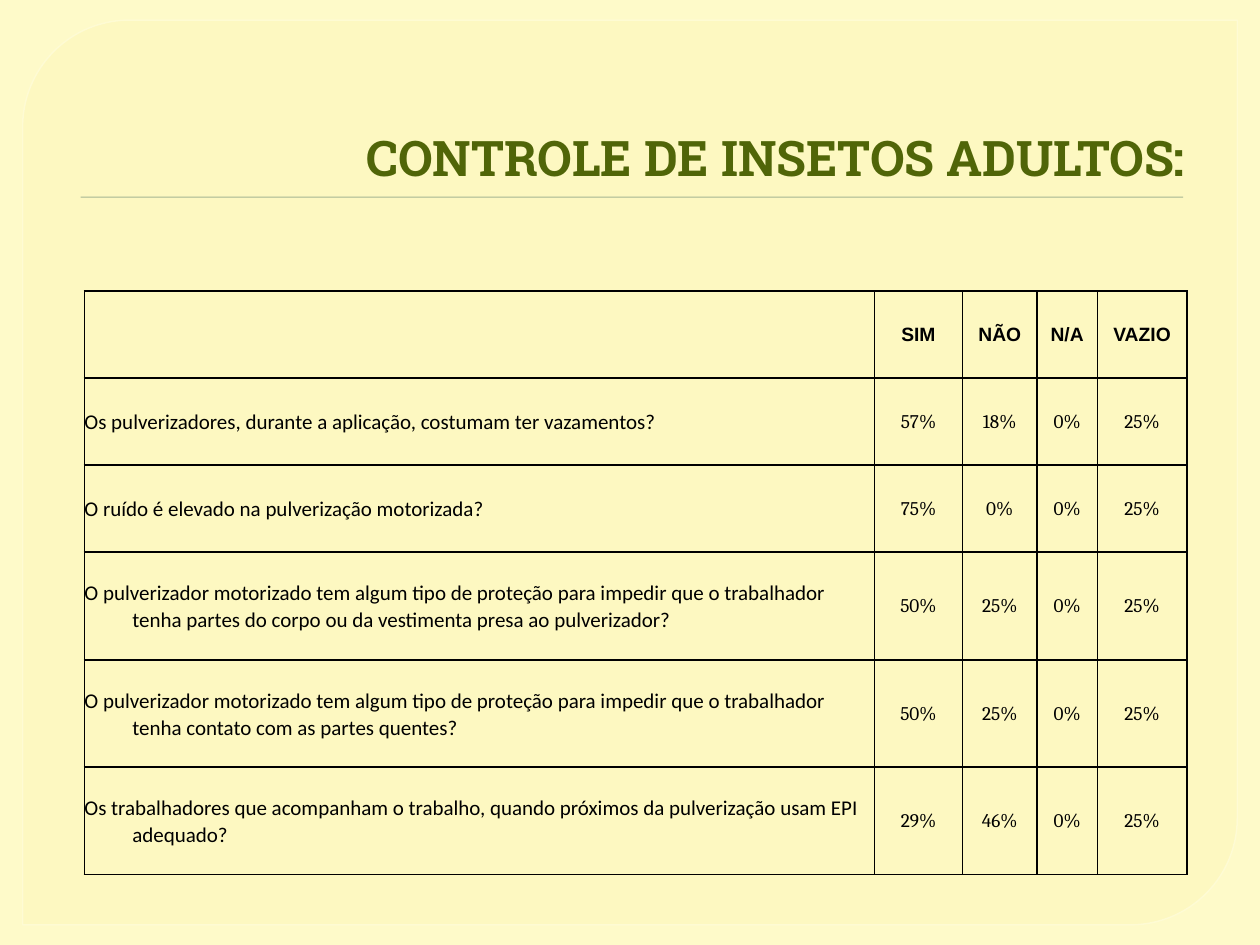
"""Build a slide with a survey table on the control of adult insects."""
from lxml import etree
from pptx import Presentation
from pptx import util as u
from pptx.dml import color
from pptx.enum import shapes, text
from pptx.oxml import ns


def paint(fill, tint):
    fill.solid()
    fill.fore_color.rgb = color.RGBColor.from_string(tint)


def write(frame, words, size, face, bold, tint, align):
    par = frame.paragraphs[0]
    par.alignment = align
    run = par.add_run()
    run.text = words
    look = {"size": u.Pt(size), "name": face, "bold": bold}
    for key, val in look.items():
        setattr(run.font, key, val)
    paint(run.font.fill, tint)
    return par


LEFT, MID, RIGHT = text.PP_ALIGN.LEFT, text.PP_ALIGN.CENTER, text.PP_ALIGN.RIGHT
KIND = shapes.MSO_SHAPE

deck = Presentation()
deck.slide_width, deck.slide_height = u.Inches(10), u.Inches(7.5)
slide = deck.slides.add_slide(deck.slide_layouts[6])
paint(slide.background.fill, "FEFAC9")

parts = [
    (KIND.ROUND_2_DIAG_RECTANGLE, (0.18, 0.16, 9.64, 7.18), "FDF8BE"),
    (KIND.RECTANGLE, (0.64, 1.56, 8.75, 0.01), "A5B592"),
]
drawn = []
for kind, box, tint in parts:
    shape = slide.shapes.add_shape(kind, *map(u.Inches, box))
    shape.shadow.inherit = False
    paint(shape.fill, tint)
    shape.line.fill.background()
    drawn.append(shape)

panel = drawn[0]
panel.adjustments[0], panel.adjustments[1] = 0.118, 0
paint(panel.line.fill, "FFFCD6")
panel.line.width = u.Pt(0.87)
for node, alpha in zip(panel.element.spPr.iter(ns.qn("a:srgbClr")), (65, 88)):
    etree.SubElement(node, ns.qn("a:alpha"), val=str(alpha * 1000))

title = slide.shapes.add_textbox(*map(u.Inches, (0.5, 0.28, 9, 1.25))).text_frame
title.word_wrap = True
title.vertical_anchor = text.MSO_ANCHOR.BOTTOM
write(title, "CONTROLE DE INSETOS ADULTOS:", 28, "Roboto Slab", True, "506508", RIGHT)

rows = [
    ("", "SIM", "NÃO", "N/A", "VAZIO"),
    ("Os pulverizadores, durante a aplicação, costumam ter vazamentos?",
     "57%", "18%", "0%", "25%"),
    ("O ruído é elevado na pulverização motorizada?",
     "75%", "0%", "0%", "25%"),
    ("O pulverizador motorizado tem algum tipo de proteção para impedir que o "
     "trabalhador tenha partes do corpo ou da vestimenta presa ao pulverizador?",
     "50%", "25%", "0%", "25%"),
    ("O pulverizador motorizado tem algum tipo de proteção para impedir que o "
     "trabalhador tenha contato com as partes quentes?",
     "50%", "25%", "0%", "25%"),
    ("Os trabalhadores que acompanham o trabalho, quando próximos da "
     "pulverização usam EPI adequado?",
     "29%", "46%", "0%", "25%"),
]
wide = [6.27, 0.7, 0.59, 0.48, 0.71]
high = [0.69, 0.69, 0.69, 0.86, 0.85, 0.85]
gaps = [0, 0.1, 0.1, 1.4, 1.3, 0.1]
trim = dict.fromkeys(("margin_left", "margin_right", "margin_top", "margin_bottom"), 0)
trim["vertical_anchor"] = text.MSO_ANCHOR.MIDDLE

area = map(u.Inches, (0.67, 2.31, sum(wide), sum(high)))
table = slide.shapes.add_table(len(rows), len(wide), *area).table
table.first_row = table.horz_banding = False
for col, size in zip(table.columns, wide):
    col.width = u.Inches(size)
for row, size in zip(table.rows, high):
    row.height = u.Inches(size)

for i, row in enumerate(rows):
    for j, words in enumerate(row):
        cell = table.cell(i, j)
        for key, val in trim.items():
            setattr(cell, key, val)
        props = cell._tc.get_or_add_tcPr()
        for side in ("lnL", "lnR", "lnT", "lnB"):
            edge = etree.SubElement(props, ns.qn("a:" + side), w=str(u.Pt(1)))
            ink = etree.SubElement(edge, ns.qn("a:solidFill"))
            etree.SubElement(ink, ns.qn("a:srgbClr"), val="000000")
        cell.fill.background()
        if not words:
            continue
        if j == 0:
            style = (12, "Calibri", False, "000000", LEFT)
        elif i == 0:
            style = (11, "Arial", True, "000000", MID)
        else:
            style = (11, "Cambria", False, "000000", MID)
        par = write(cell.text_frame, words, *style)
        par.line_spacing = 1.07
        if j == 0:
            par.space_before = u.Pt(gaps[i])
            indent = u.Inches(0.38)
            ppr = par._p.get_or_add_pPr()
            ppr.set("marL", str(indent))
            ppr.set("indent", str(-indent))

deck.save("out.pptx")
